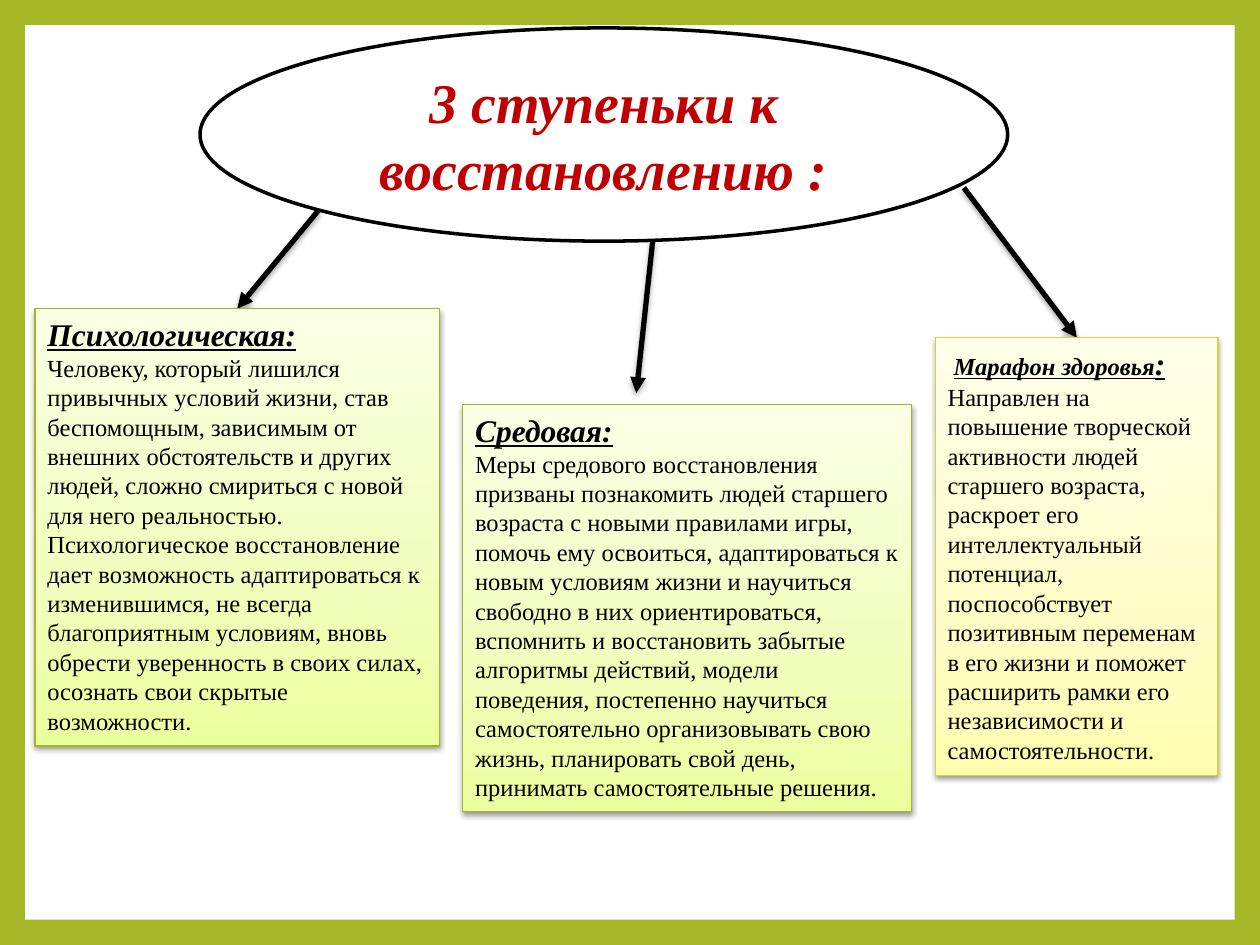
from copy import deepcopy

from pptx import Presentation
from pptx.dml.color import RGBColor
from pptx.enum.shapes import MSO_CONNECTOR, MSO_SHAPE
from pptx.enum.text import MSO_ANCHOR, MSO_AUTO_SIZE, PP_ALIGN
from pptx.oxml import parse_xml
from pptx.oxml.ns import qn
from pptx.util import Pt

RECTANGLE, OVAL = MSO_SHAPE.RECTANGLE, MSO_SHAPE.OVAL
STRAIGHT = MSO_CONNECTOR.STRAIGHT
MIDDLE, TOP = MSO_ANCHOR.MIDDLE, MSO_ANCHOR.TOP
NO_FIT, GROW = MSO_AUTO_SIZE.NONE, MSO_AUTO_SIZE.SHAPE_TO_FIT_TEXT
CENTER, LEFT = PP_ALIGN.CENTER, PP_ALIGN.LEFT

TITLE_ONLY = 5
DRAWING_NS = "http://schemas.openxmlformats.org/drawingml/2006/main"
GREEN, BLACK, WHITE, RED = "A6B727", "000000", "FFFFFF", "C00000"
LIME = ("A5B623", ("ECFF9E", "F1FEBB", "FAFFE5"))
YELLOW = ("D6D342", ("FFFDAE", "FFFDC6", "FFFEE9"))
STOP_POSITIONS = (0, 0.35, 1)


def rgb(value):
    return RGBColor.from_string(value)


def points(*lengths):
    return [Pt(length) for length in lengths]


def cast_shadow(element, opacity, distance):
    """Give the shape or connector a soft black shadow straight below it."""
    element.spPr.append(parse_xml(
        f'<a:effectLst xmlns:a="{DRAWING_NS}">'
        f'<a:outerShdw blurRad="{Pt(3.1)}" dist="{Pt(distance)}" dir="5400000" rotWithShape="0">'
        f'<a:srgbClr val="{BLACK}"><a:alpha val="{opacity * 1000}"/></a:srgbClr>'
        '</a:outerShdw></a:effectLst>'))


class SlideBuilder:
    font_name = "Times New Roman"

    def __init__(self, slide):
        self.slide = slide

    def style(self, font, size, color=BLACK, emphasis=False, underline=False):
        font.name = self.font_name
        font.size = Pt(size)
        font.color.rgb = rgb(color)
        font.bold = font.italic = emphasis
        font.underline = underline

    def background(self, color):
        fill = self.slide.background.fill
        fill.solid()
        fill.fore_color.rgb = rgb(color)

    def panel(self, kind, box, fill, outline=None):
        shape = self.slide.shapes.add_shape(kind, *points(*box))
        shape.shadow.inherit = False
        shape.fill.solid()
        shape.fill.fore_color.rgb = rgb(fill)
        if outline:
            shape.line.color.rgb = rgb(outline)
            shape.line.width = Pt(2)
        else:
            shape.line.fill.background()

    def title(self, text, box):
        title = self.slide.shapes.title
        title.left, title.top, title.width, title.height = points(*box)
        frame = title.text_frame
        frame.text = text
        frame.word_wrap = True
        frame.auto_size = NO_FIT
        frame.vertical_anchor = MIDDLE
        paragraph = frame.paragraphs[0]
        paragraph.alignment = CENTER
        self.style(paragraph.font, 32, RED, emphasis=True)
        # The title lies above the oval drawn before it.
        self.slide.shapes._spTree.append(title._element)

    def arrow(self, start, end):
        arrow = self.slide.shapes.add_connector(STRAIGHT, *points(*start, *end))
        arrow.line.color.rgb = rgb(BLACK)
        arrow.line.width = Pt(3)
        arrow.line._get_or_add_ln().append(
            parse_xml(f'<a:tailEnd xmlns:a="{DRAWING_NS}" type="triangle"/>'))
        cast_shadow(arrow._element, 35, 1.8)

    def gradient(self, card, colors):
        card.fill.gradient()
        card.fill.gradient_angle = 90
        stop_list = card._element.spPr.find(".//" + qn("a:gsLst"))
        stop_list.append(deepcopy(stop_list[-1]))
        for stop, position, color in zip(card.fill.gradient_stops, STOP_POSITIONS, colors):
            stop.position = position
            stop.color.rgb = rgb(color)

    def card(self, box, palette, heading, body):
        """Heading is a list of (text, size, emphasised) runs."""
        outline, colors = palette
        card = self.slide.shapes.add_shape(RECTANGLE, *points(*box))
        self.gradient(card, colors)
        card.line.color.rgb = rgb(outline)
        card.line.width = Pt(0.75)
        cast_shadow(card._element, 38, 1.6)

        frame = card.text_frame
        frame.word_wrap = True
        frame.auto_size = GROW
        frame.vertical_anchor = TOP
        heading_line, body_text = frame.paragraphs[0], frame.add_paragraph()
        heading_line.alignment = body_text.alignment = LEFT
        for text, size, emphasised in heading:
            run = heading_line.add_run()
            run.text = text
            self.style(run.font, size, emphasis=emphasised, underline=emphasised)
        body_text.text = body
        self.style(body_text.font, 14)


CARDS = [
    ((20, 176.4, 231, 250), LIME, [("Психологическая:", 18, True)],
     "Человеку, который лишился привычных условий жизни, став беспомощным, "
     "зависимым от внешних обстоятельств и других людей, сложно смириться с новой "
     "для него реальностью. Психологическое восстановление дает возможность "
     "адаптироваться к изменившимся, не всегда благоприятным условиям, вновь "
     "обрести уверенность в своих силах, осознать свои скрытые возможности."),
    ((534.4, 193, 161.6, 250), YELLOW,
     [(" ", 14, False), ("Марафон здоровья", 14, True), (":", 18, True)],
     "Направлен на повышение творческой активности людей старшего возраста, "
     "раскроет его интеллектуальный потенциал, поспособствует позитивным переменам "
     "в его жизни и поможет расширить рамки его независимости и самостоятельности."),
    ((264.4, 231.2, 256.4, 232.6), LIME, [("Средовая:", 18, True)],
     "Меры средового восстановления призваны познакомить людей старшего возраста с "
     "новыми правилами игры, помочь ему освоиться, адаптироваться к новым условиям "
     "жизни и научиться свободно в них ориентироваться, вспомнить и восстановить "
     "забытые алгоритмы действий, модели поведения, постепенно научиться "
     "самостоятельно организовывать свою жизнь, планировать свой день, принимать "
     "самостоятельные решения."),
]
ARROWS = [
    ((373, 137.5), (363.6, 224.6)),
    ((182, 120.2), (135.6, 176.4)),
    ((550.8, 107.3), (615.4, 193)),
]


def main():
    presentation = Presentation()
    presentation.slide_width, presentation.slide_height = points(720, 540)
    layout = presentation.slide_layouts[TITLE_ONLY]
    builder = SlideBuilder(presentation.slides.add_slide(layout))

    builder.background(GREEN)
    builder.panel(RECTANGLE, (14.4, 14.4, 691.2, 511.2), WHITE)
    builder.panel(OVAL, (114.3, 16, 461.5, 121.8), WHITE, BLACK)
    builder.title("3 ступеньки к восстановлению :", (182, 34, 326, 86))
    for start, end in ARROWS:
        builder.arrow(start, end)
    for card in CARDS:
        builder.card(*card)

    presentation.save("out.pptx")


if __name__ == "__main__":
    main()
